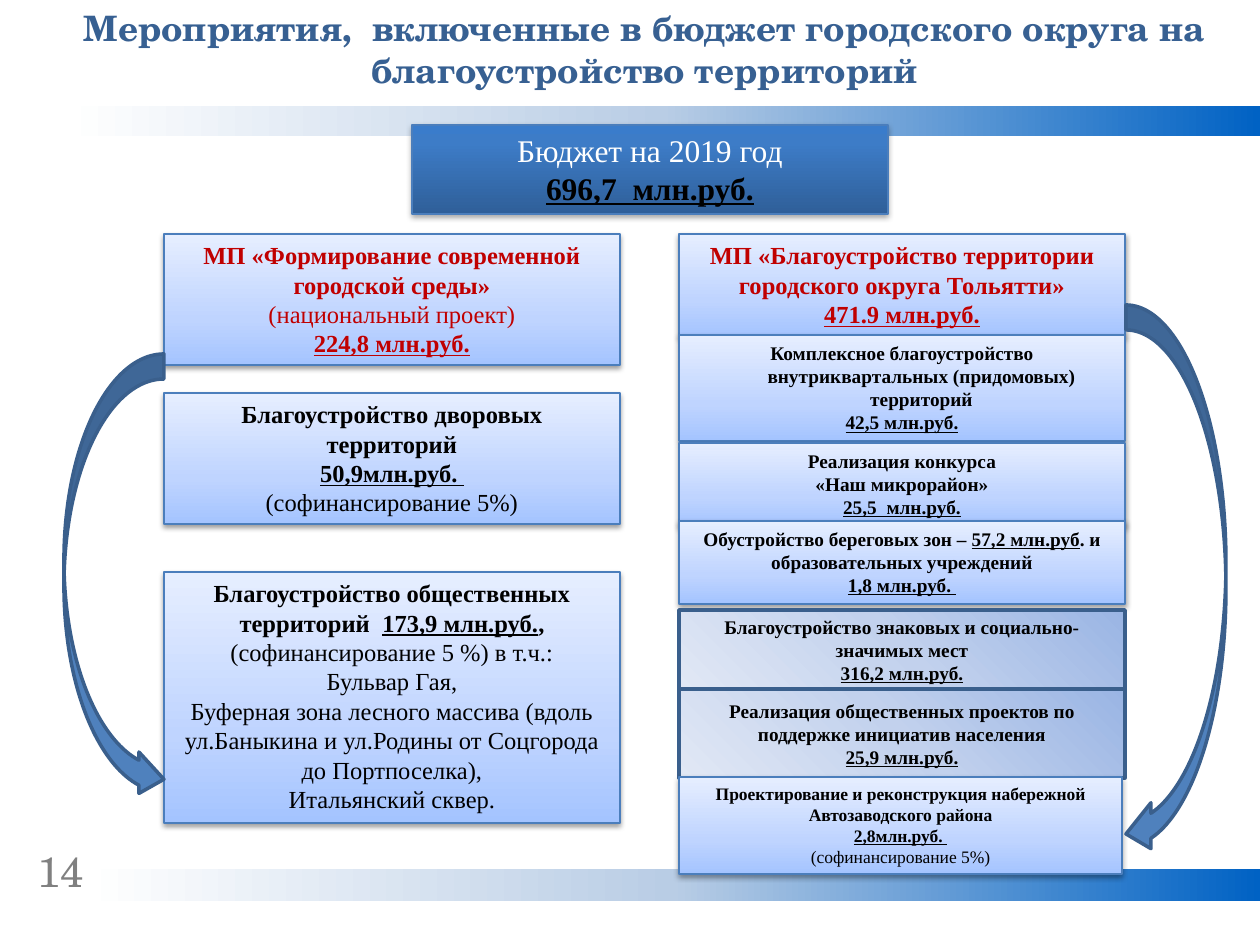
from dataclasses import dataclass

from lxml import etree
from pptx import Presentation
from pptx.dml.color import RGBColor
from pptx.enum import shapes, text
from pptx.oxml.ns import nsdecls, qn
from pptx.util import Pt

PX = 914400 / 126


@dataclass(frozen=True)
class Theme:
    heading_font: str = "TeX Gyre Schola"
    body_font: str = "Times New Roman"
    title: str = "376092"
    number: str = "808080"
    accent: str = "C00000"
    ink: str = "000000"
    white: str = "FFFFFF"
    edge: str = "4B7EBC"
    dark_edge: str = "3A5F8C"
    arrow: str = "4F81BD"
    band: tuple = ((0, "0062C4"), (50, "B9CDE5"), (100, "FFFFFF"))
    card: tuple = ((0, "A4C4FF"), (35, "BFD4FF"), (100, "E6EEFF"))
    total: tuple = ((0, "2F5F99"), (80, "3D7CC7"), (100, "3A7CCB"))
    slate: tuple = ((0, "9AB5E4"), (50, "C2D1ED"), (100, "E1E8F5"))
    number_size: int = 24
    title_size: int = 20
    total_size: int = 18
    large: int = 14
    small: int = 11
    tiny: int = 10


THEME = Theme()
LINEAR_UP = '<a:lin ang="16200000" scaled="0"/>'
LINEAR_LEFT = '<a:lin ang="10800000" scaled="0"/>'
DIAGONAL = '<a:lin ang="8100000" scaled="0"/>'
CORNER = '<a:path path="circle"><a:fillToRect l="100000" b="100000"/></a:path>'


def emu(*lengths):
    return [round(length * PX) for length in lengths]


def add_shape(slide, kind, box):
    shape = slide.shapes.add_shape(kind, *emu(*box))
    shape.shadow.inherit = False
    return shape


def set_line(shape, color, width):
    shape.line.color.rgb = RGBColor.from_string(color)
    shape.line.width = Pt(width)


def set_gradient(shape, stops, direction):
    shape.fill.gradient()
    gradient = shape._element.spPr.find(qn("a:gradFill"))
    stop_xml = "".join(f'<a:gs pos="{position * 1000}"><a:srgbClr val="{color}"/></a:gs>'
                       for position, color in stops)
    parts = etree.fromstring(f'<a:gradFill {nsdecls("a")}><a:gsLst>{stop_xml}</a:gsLst>{direction}</a:gradFill>')
    gradient[:] = list(parts)


def set_shadow(shape, opacity):
    effects = shape._element.spPr.find(qn("a:effectLst"))
    effects.append(etree.fromstring(
        f'<a:outerShdw {nsdecls("a")} blurRad="39370" dist="20320" dir="5400000" rotWithShape="0">'
        f'<a:srgbClr val="000000"><a:alpha val="{opacity * 1000}"/></a:srgbClr></a:outerShdw>'))


def write(shape, paragraphs, size, color, font=THEME.body_font, align=text.PP_ALIGN.CENTER):
    """Each paragraph is a list of (words, style, optional colour); style holds b and u."""
    frame = shape.text_frame
    frame.word_wrap = True
    for index, runs in enumerate(paragraphs):
        paragraph = frame.paragraphs[0] if index == 0 else frame.add_paragraph()
        paragraph.alignment = align
        for words, style, *own_color in runs:
            if words == "\n":
                paragraph.add_line_break()
                continue
            run = paragraph.add_run()
            run.text = words
            run.font.name = font
            run.font.size = Pt(size)
            run.font.bold = "b" in style
            run.font.underline = "u" in style
            run.font.color.rgb = RGBColor.from_string(own_color[0] if own_color else color)


def add_card(slide, box, paragraphs, size, color=THEME.ink, stops=THEME.card, opacity=38):
    card = add_shape(slide, shapes.MSO_SHAPE.RECTANGLE, box)
    set_gradient(card, stops, LINEAR_UP)
    set_line(card, THEME.edge, 0.75)
    set_shadow(card, opacity)
    card.text_frame.vertical_anchor = text.MSO_ANCHOR.TOP
    write(card, paragraphs, size, color)
    return card


def add_slate_card(slide, box, paragraphs, direction):
    card = add_shape(slide, shapes.MSO_SHAPE.RECTANGLE, box)
    set_gradient(card, THEME.slate, direction)
    set_line(card, THEME.dark_edge, 2)
    card.text_frame.vertical_anchor = text.MSO_ANCHOR.MIDDLE
    write(card, paragraphs, THEME.small, THEME.ink)


def add_arrow(slide, kind, box, head_width):
    arrow = add_shape(slide, kind, box)
    for index, value in enumerate((0.25, head_width, 0.25)):
        arrow.adjustments[index] = value
    arrow.fill.solid()
    arrow.fill.fore_color.rgb = RGBColor.from_string(THEME.arrow)
    set_line(arrow, THEME.dark_edge, 2)


def frame_region(slide, width):
    # Bands run to the right edge of the slide
    for left, top, height in ((64, 106, 30), (84, 869, 32)):
        band = add_shape(slide, shapes.MSO_SHAPE.RECTANGLE, (left, top, width - left, height))
        set_gradient(band, THEME.band, LINEAR_LEFT)
        band.line.fill.background()
    # Page number and title
    number = slide.shapes.add_textbox(*emu(25, 839, 98, 64))
    write(number, [[("14", "")]], THEME.number_size, THEME.number, THEME.heading_font, text.PP_ALIGN.LEFT)
    title = slide.shapes.add_textbox(*emu(44, 0, 1201, 130))
    write(title, [[("Мероприятия,  включенные в бюджет городского округа на благоустройство территорий", "b")]],
          THEME.title_size, THEME.title, THEME.heading_font)


def total_region(slide, box):
    add_card(slide, box, [[("Бюджет на 2019 год", "", THEME.white)], [("696,7  млн.руб.", "bu")]],
             THEME.total_size, stops=THEME.total, opacity=35)


def environment_region(slide, box):
    left, top, width, height = box
    # Programme heading
    add_card(slide, (left, top, width, 131), [
        [("МП «Формирование современной городской среды»", "b"), ("\n", ""), ("(национальный проект)", "")],
        [("224,8 млн.руб.", "bu")]], THEME.large, THEME.accent)
    # Courtyards and public areas
    add_card(slide, (left, top + 159, width, 131), [
        [("Благоустройство дворовых территорий", "b")],
        [("50,9млн.руб. ", "bu")],
        [("(софинансирование 5%)", "")]], THEME.large)
    add_card(slide, (left, top + 338, width, height - 338), [
        [("Благоустройство общественных территорий  ", "b"), ("173,9 млн.руб.", "bu"), (", ", "b"),
         ("(софинансирование 5 %) в т.ч.:", "")],
        [("Бульвар Гая,", "")],
        [("Буферная зона лесного массива (вдоль ул.Баныкина и ул.Родины от Соцгорода до Портпоселка),", "")],
        [("Итальянский сквер.", "")]], THEME.large)
    add_arrow(slide, shapes.MSO_SHAPE.CURVED_RIGHT_ARROW, (left - 100, top + 120, 100, 446), 0.414)


def improvement_region(slide, box):
    left, top, width, height = box
    # Programme heading
    add_card(slide, (left, top, width, 102), [
        [("МП «Благоустройство территории городского округа Тольятти»", "b")],
        [("471.9 млн.руб.", "bu")]], THEME.large, THEME.accent)
    # Light cards
    complex_card = add_card(slide, (left, top + 101, width, 106), [
        [("Комплексное благоустройство внутриквартальных (придомовых) территорий", "b")],
        [("42,5 млн.руб.", "bu")]], THEME.small)
    properties = complex_card.text_frame.paragraphs[0]._p.get_or_add_pPr()
    hanging = emu(39)[0]
    properties.set("marL", str(hanging))
    properties.set("indent", str(-hanging))
    add_card(slide, (left, top + 209, width, 83), [
        [("Реализация конкурса", "b")],
        [("«Наш микрорайон»", "b")],
        [("25,5  млн.руб.", "bu")]], THEME.small)
    add_card(slide, (left, top + 287, width, 83), [
        [("Обустройство береговых зон – ", "b"), ("57,2 млн.руб", "bu"), (". и образовательных учреждений", "b")],
        [("1,8 млн.руб. ", "bu")]], THEME.small)
    # Outlined cards
    add_slate_card(slide, (left, top + 376, width, 79), [
        [("Благоустройство знаковых и социально-значимых мест", "b")],
        [("316,2 млн.руб.", "bu")]], DIAGONAL)
    add_slate_card(slide, (left, top + 455, width, 89), [
        [("Реализация общественных проектов по поддержке инициатив населения", "b")],
        [("25,9 млн.руб.", "bu")]], CORNER)
    # Embankment
    add_card(slide, (left, top + 543, width - 3, height - 543), [
        [("Проектирование и реконструкция набережной Автозаводского района", "b")],
        [("2,8млн.руб. ", "bu")],
        [("(софинансирование 5%)", "")]], THEME.tiny)
    add_arrow(slide, shapes.MSO_SHAPE.CURVED_LEFT_ARROW, (left + width + 1, top + 71, 100, 552), 0.46)


def main():
    presentation = Presentation()
    presentation.slide_width, presentation.slide_height = emu(1260, 945)
    slide = presentation.slides.add_slide(presentation.slide_layouts[6])
    frame_region(slide, 1260)
    total_region(slide, (412, 125, 476, 89))
    environment_region(slide, (164, 234, 456, 589))
    improvement_region(slide, (679, 234, 446, 640))
    presentation.save("out.pptx")


if __name__ == "__main__":
    main()
